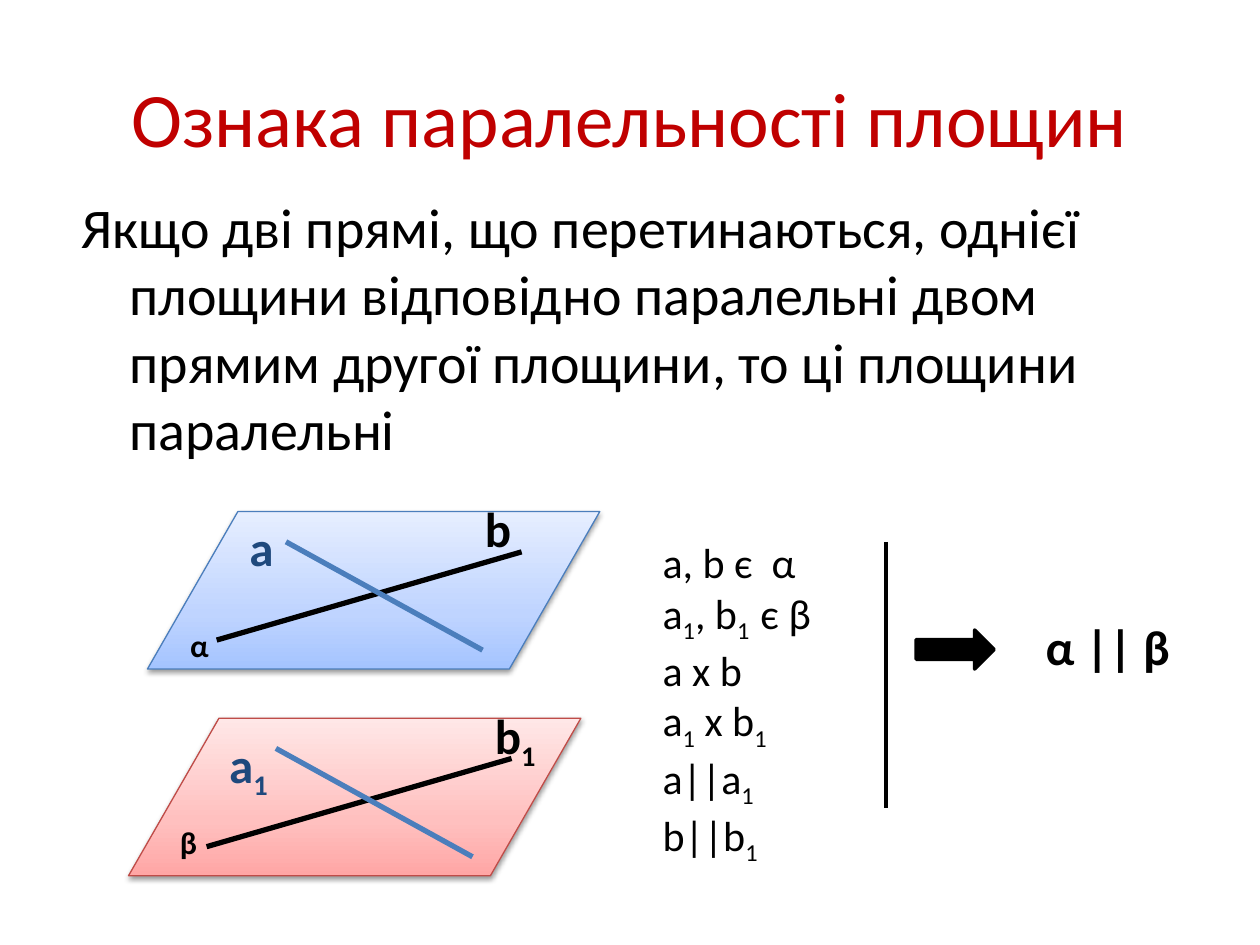
import copy

import pptx
import pptx.dml.color
import pptx.enum.shapes
import pptx.enum.text
import pptx.oxml
import pptx.oxml.ns
import pptx.util

PX = 9144  # EMU; 100 px to the inch
FONT = "Calibri"

RGBColor = pptx.dml.color.RGBColor
BLACK = RGBColor(0x00, 0x00, 0x00)
RED = RGBColor(0xC0, 0x00, 0x00)
NAVY = RGBColor(0x1F, 0x49, 0x7D)
BLUE = RGBColor(0x4B, 0x7E, 0xBC)
BRICK = RGBColor(0xBF, 0x4C, 0x48)
BLUE_TINTS = RGBColor(0xA4, 0xC4, 0xFF), RGBColor(0xBF, 0xD4, 0xFF), RGBColor(0xE6, 0xEE, 0xFF)
RED_TINTS = RGBColor(0xFF, 0xA6, 0xA5), RGBColor(0xFF, 0xC0, 0xBF), RGBColor(0xFF, 0xE7, 0xE7)

SHADOW = (
    f'<a:outerShdw {pptx.oxml.ns.nsdecls("a")} blurRad="40000" dist="20000" '
    'dir="5400000" rotWithShape="0"><a:srgbClr val="000000">'
    '<a:alpha val="38000"/></a:srgbClr></a:outerShdw>'
)

presentation = pptx.Presentation()
presentation.slide_width = 1000 * PX
presentation.slide_height = 750 * PX
slide = presentation.slides.add_slide(presentation.slide_layouts[6])


def add_text(box, lines, size, color=BLACK, bold=False):
    """Add a text box; in each line, text between ~ marks is a subscript."""
    shape = slide.shapes.add_textbox(*(value * PX for value in box))
    frame = shape.text_frame
    frame.word_wrap = True
    for number, line in enumerate(lines):
        paragraph = frame.add_paragraph() if number else frame.paragraphs[0]
        paragraph.font.name = FONT
        paragraph.font.size = pptx.util.Pt(size)
        paragraph.font.color.rgb = color
        paragraph.font.bold = bold
        for position, piece in enumerate(line.split("~")):
            if piece:
                run = paragraph.add_run()
                run.text = piece
                if position % 2:
                    run._r.get_or_add_rPr().set("baseline", "-25000")
    return frame


def add_line(x1, y1, x2, y2, color, width):
    line = slide.shapes.add_connector(
        pptx.enum.shapes.MSO_CONNECTOR.STRAIGHT, x1 * PX, y1 * PX, x2 * PX, y2 * PX
    )
    line.line.color.rgb = color
    line.line.width = pptx.util.Pt(width)
    line._element.spPr.append(pptx.oxml.parse_xml(f'<a:effectLst {pptx.oxml.ns.nsdecls("a")}/>'))


# Title and theorem
title = add_text((50, 30, 900, 125), ["Ознака паралельності площин"], 44, RED)
title.vertical_anchor = pptx.enum.text.MSO_ANCHOR.MIDDLE
title.paragraphs[0].alignment = pptx.enum.text.PP_ALIGN.CENTER

theorem = add_text(
    (55, 148, 900, 247),
    ["Якщо дві прямі, що перетинаються, однієї площини відповідно паралельні "
     "двом прямим другої площини, то ці площини паралельні"],
    32,
)
properties = theorem.paragraphs[0]._p.get_or_add_pPr()
properties.set("marL", str(38 * PX))
properties.set("indent", str(-38 * PX))

# Two planes, each with a pair of crossing lines
for left, top, tints, outline in ((117, 406, BLUE_TINTS, BLUE), (102, 570, RED_TINTS, BRICK)):
    plane = slide.shapes.add_shape(
        pptx.enum.shapes.MSO_SHAPE.FLOWCHART_DATA, left * PX, top * PX, 359 * PX, 125 * PX
    )
    plane.fill.gradient()
    plane.fill.gradient_angle = 90
    first_stop = plane._element.spPr.find(".//" + pptx.oxml.ns.qn("a:gs"))
    first_stop.addnext(copy.deepcopy(first_stop))
    for stop, position, tint in zip(plane.fill.gradient_stops, (0, 0.35, 1), tints):
        stop.position = position
        stop.color.rgb = tint
    plane.line.color.rgb = outline
    plane.line.width = pptx.util.Pt(0.75)
    plane.shadow.inherit = False
    effects = plane._element.spPr.find(pptx.oxml.ns.qn("a:effectLst"))
    effects.append(pptx.oxml.parse_xml(SHADOW))

for dx, dy in ((0, 0), (-8, 164)):
    add_line(172 + dx, 508 + dy, 414 + dx, 438 + dy, BLACK, 3)
    add_line(227 + dx, 430 + dy, 383 + dx, 516 + dy, BLUE, 3)

for label, left, top, width, color in (
    ("а", 188, 406, 31, NAVY),
    ("b", 375, 391, 31, BLACK),
    ("а~1~", 172, 578, 62, NAVY),
    ("b~1~", 383, 555, 62, BLACK),
):
    add_text((left, top, width, 57), [label], 28, color, bold=True)

for label, left, top in (("α", 141, 492), ("β", 133, 648)):
    add_text((left, top, 31, 40), [label], 18, bold=True)

# Conditions and conclusion
conditions = ["a, b є  α", "а~1~, b~1  ~є β", "а x b", "а~1~ x b~1~", "а||a~1~", "b||b~1~"]
add_text((516, 421, 195, 243), conditions, 24)
add_line(703, 430, 703, 641, BLACK, 2.25)

arrow = slide.shapes.add_shape(
    pptx.enum.shapes.MSO_SHAPE.RIGHT_ARROW, 727 * PX, 500 * PX, 62 * PX, 31 * PX
)
arrow.shadow.inherit = False
arrow.fill.solid()
arrow.fill.fore_color.rgb = BLACK
arrow.line.color.rgb = BLACK
arrow.line.width = pptx.util.Pt(2)

add_text((820, 484, 148, 57), ["α || β"], 28, bold=True)

presentation.save("out.pptx")
